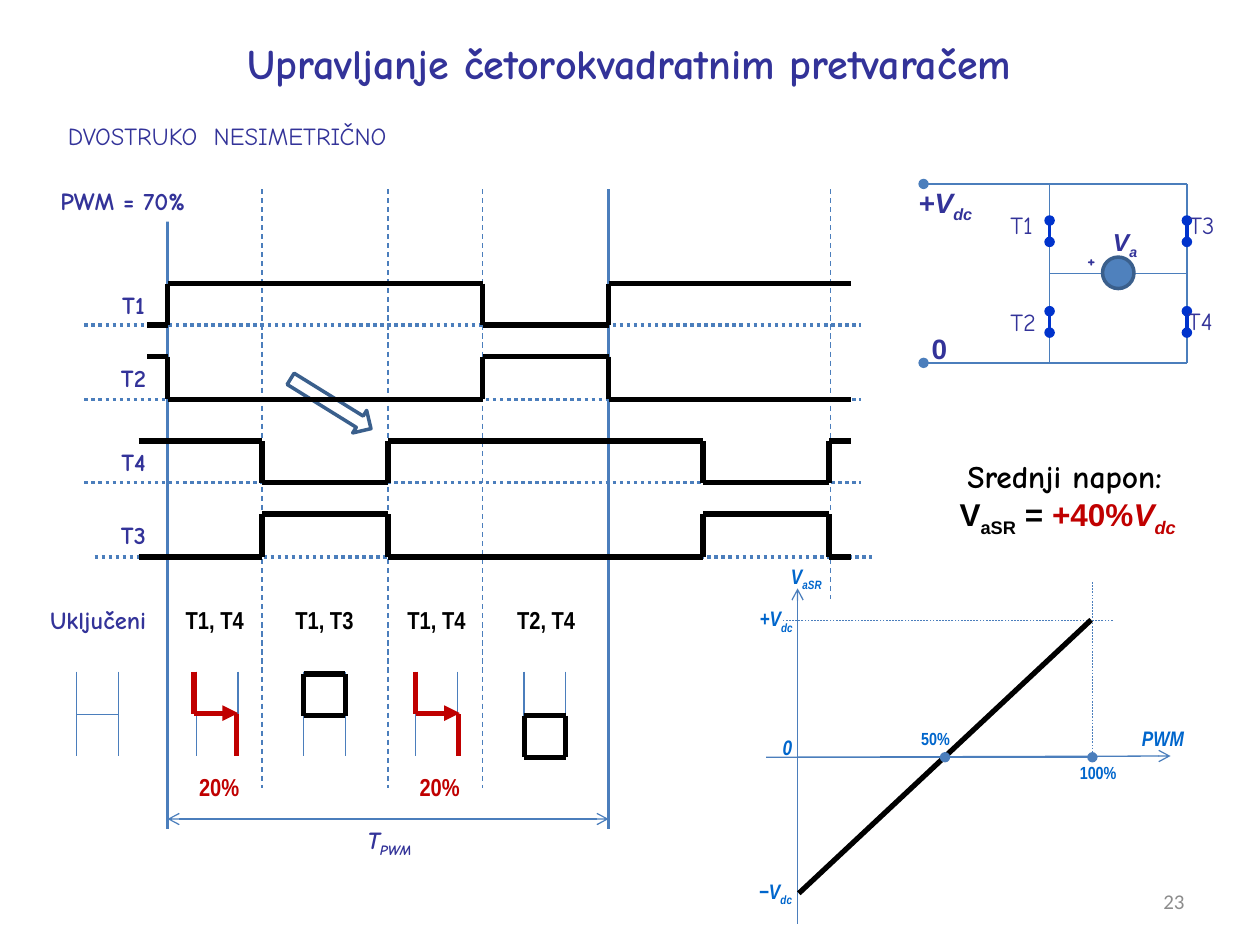
"""Build the slide on PWM control of a four-quadrant converter."""
import itertools

import lxml.etree
import pptx
import pptx.dml.color
import pptx.enum.dml
import pptx.enum.shapes
import pptx.enum.text
import pptx.oxml.ns
import pptx.util

Inches = pptx.util.Inches
Pt = pptx.util.Pt
RGB = pptx.dml.color.RGBColor
DASH = pptx.enum.dml.MSO_LINE.DASH
DOT = pptx.enum.dml.MSO_LINE.ROUND_DOT
PRESET = pptx.enum.shapes.MSO_SHAPE
ALIGN = pptx.enum.text.PP_ALIGN

BLUE = RGB(0x4B, 0x7E, 0xBC)
OUTLINE = RGB(0x3A, 0x5F, 0x8C)
MOTOR = RGB(0x4F, 0x81, 0xBD)
SWITCH = RGB(0x00, 0x33, 0xCC)
INDIGO = RGB(0x33, 0x33, 0x99)
AXIS = RGB(0x00, 0x66, 0xCC)
RED = RGB(0xC0, 0x00, 0x00)
BLACK = RGB(0, 0, 0)
WHITE = RGB(255, 255, 255)
GRAY = RGB(0x8C, 0x8C, 0x8C)

COMIC = {"name": "Comic Neue", "size": Pt(14), "color": INDIGO}
COMIC_BOLD = COMIC | {"bold": True}
NARROW = {"name": "Arial Narrow", "size": Pt(14), "bold": True, "color": BLACK}
CHART = NARROW | {"size": Pt(12), "italic": True, "color": AXIS}
PERCENT = CHART | {"size": Pt(10), "italic": False}
CIRCUIT = {"name": "Arial", "size": Pt(16), "bold": True, "color": INDIGO}
SUB = {"baseline": "-25000"}

deck = pptx.Presentation()
deck.slide_width, deck.slide_height = Inches(10), Inches(7.5)
slide = deck.slides.add_slide(deck.slide_layouts[5])


def draw_line(start, end, color=BLUE, width=0.75, dash=None, head=None, tail=None):
    line = slide.shapes.add_connector(
        pptx.enum.shapes.MSO_CONNECTOR.STRAIGHT, *map(Inches, start + end))
    line.line.color.rgb = color
    for name, value in {"width": Pt(width), "dash_style": dash}.items():
        setattr(line.line, name, value)
    for tag, kind in (("a:headEnd", head), ("a:tailEnd", tail)):
        if kind:
            lxml.etree.SubElement(line.line._ln, pptx.oxml.ns.qn(tag), type=kind)
    lxml.etree.SubElement(line._element.spPr, pptx.oxml.ns.qn("a:effectLst"))


def write(place, paragraphs, style, align=ALIGN.CENTER, wrap=False, holder=None):
    holder = holder or slide.shapes.add_textbox(*map(Inches, place))
    frame = holder.text_frame
    frame.word_wrap = wrap
    for index, pieces in enumerate(paragraphs):
        paragraph = frame.add_paragraph() if index else frame.paragraphs[0]
        paragraph.alignment = align
        for text, changes in pieces:
            run = paragraph.add_run()
            run.text = text
            for name, value in (style | changes).items():
                if name == "color":
                    run.font.color.rgb = value
                elif name == "baseline":
                    run._r.get_or_add_rPr().set(name, value)
                else:
                    setattr(run.font, name, value)
    return frame


title = slide.shapes.title
for name, value in zip(("left", "top", "width", "height"), (1.37, 0.25, 7.25, 0.5)):
    setattr(title, name, Inches(value))
write(None, [[("Upravljanje četorokvadratnim pretvaračem", {})]],
      COMIC_BOLD | {"size": Pt(24)}, holder=title)

for x, bottom in ((2.08, 6.25), (3.08, 6.25), (3.83, 6.25), (6.59, 4.75)):
    draw_line((x, 1.5), (x, bottom), dash=DASH)
for x in (1.33, 4.83):
    draw_line((x, 1.5), (x, 6.58), width=1.25)
for left, right, y in ((0.67, 6.83, 2.58), (0.67, 6.83, 3.17),
                       (0.67, 6.83, 3.83), (0.75, 6.92, 4.42)):
    draw_line((left, y), (right, y), width=0, dash=DOT)
draw_line((1.33, 6.5), (4.83, 6.5), head="arrow", tail="arrow")

pwm_plate = slide.shapes.add_shape(
    PRESET.RECTANGLE, *map(Inches, (0.29, 1.42, 1.37, 0.34)))
pulse_arrow = slide.shapes.add_shape(
    PRESET.RIGHT_ARROW, *map(Inches, (2.25, 3.1, 0.75, 0.21)))
pulse_arrow.rotation = 31.8
write(None, [[("PWM = 70%", {})]], COMIC_BOLD, holder=pwm_plate)

leg_a, leg_b = (1.17, 1.33, 3.83, 4.83, 6.75), (1.1, 2.08, 3.08, 5.58, 6.58, 6.75)
for name, label_top, high, low, edges, starts_high in (
        ("T1", 2.25, 2.25, 2.58, leg_a, False),
        ("T2", 2.83, 2.83, 3.17, leg_a, True),
        ("T4", 3.5, 3.5, 3.83, leg_b, True),
        ("T3", 4.08, 4.08, 4.42, leg_b, False)):
    levels = itertools.cycle((high, low) if starts_high else (low, high))
    corners = [(x, y) for pair, y in zip(itertools.pairwise(edges), levels) for x in pair]
    for start, end in itertools.pairwise(corners):
        draw_line(start, end, BLACK, 3)
    write((0.83, label_top, 0.46, 0.34), [[(name, {})]], COMIC_BOLD)

for x in (0.61, 1.56, 2.41, 3.3, 4.16):
    for start, end in (((x, 5.33), (x, 6)), ((x + 0.33, 5.33), (x + 0.33, 6)),
                       ((x, 5.67), (x + 0.33, 5.67))):
        draw_line(start, end)
for x, top in ((2.41, 5.35), (4.16, 5.68)):
    loop = [(x, top), (x + 0.33, top), (x + 0.33, top + 0.33), (x, top + 0.33), (x, top)]
    for start, end in itertools.pairwise(loop):
        draw_line(start, end, BLACK, 3)
for x in (1.54, 3.3):
    draw_line((x, 5.33), (x, 5.67), RED, 3)
    draw_line((x + 0.34, 5.67), (x + 0.34, 6), RED, 3)
    draw_line((x, 5.66), (x + 0.35, 5.66), RED, 3, tail="triangle")

draw_line((6.08, 6.01), (9.29, 6), tail="arrow")
draw_line((6.33, 7.33), (6.33, 4.67), tail="arrow")
draw_line((8.67, 4.62), (8.67, 6.01), width=0.25, dash=DASH)
draw_line((8.83, 4.92), (6.21, 4.92), width=0.25, dash=DASH)
draw_line((6.34, 7.09), (8.66, 4.92), BLACK, 3)
for left, right in ((6.33, 7.5), (7.5, 8.67)):
    draw_line((left, 6.01), (right, 6.01), tail="oval")

for y in (1.46, 2.88):
    draw_line((7.33, y), (9.42, y), head="oval")
draw_line((8.33, 2.17), (9.42, 2.17))
for x in (8.33, 9.42):
    draw_line((x, 1.46), (x, 2.88))
    for top in (1.75, 2.47):
        draw_line((x, top), (x, top + 0.17), SWITCH, 2, head="oval", tail="oval")
motor = slide.shapes.add_shape(PRESET.OVAL, *map(Inches, (8.75, 2.04, 0.25, 0.25)))

for shape, fill, outline in ((pwm_plate, WHITE, None), (pulse_arrow, WHITE, OUTLINE),
                             (motor, MOTOR, OUTLINE)):
    shape.shadow.inherit = False
    shape.fill.solid()
    shape.fill.fore_color.rgb = fill
    if outline:
        shape.line.color.rgb = outline
        shape.line.width = Pt(2)
    else:
        shape.line.fill.background()

for place, pieces, style in (
        ((0.22, 0.91, 3.17, 0.34), [("DVOSTRUKO  NESIMETRIČNO", {})], COMIC),
        ((2.75, 6.5, 0.72, 0.34), [("T", {}), ("PWM ", SUB)], COMIC_BOLD | {"italic": True}),
        ((0.25, 4.75, 1.06, 0.34), [("Uključeni", {})], COMIC_BOLD),
        ((1.37, 4.75, 0.67, 0.34), [("T1, T4", {})], NARROW),
        ((2.24, 4.75, 0.67, 0.34), [("T1, T3", {})], NARROW),
        ((3.13, 4.75, 0.67, 0.34), [("T1, T4", {})], NARROW),
        ((4, 4.75, 0.67, 0.34), [("T2, T4", {})], NARROW),
        ((1.48, 6.08, 0.52, 0.34), [("20%", {})], NARROW | {"color": RED}),
        ((3.23, 6.08, 0.52, 0.34), [("20%", {})], NARROW | {"color": RED}),
        ((8.96, 5.71, 0.54, 0.3), [("PWM", {})], CHART),
        ((7.21, 5.73, 0.43, 0.27), [("50%", {})], PERCENT),
        ((8.47, 6, 0.49, 0.27), [("100%", {})], PERCENT),
        ((6.17, 4.42, 0.46, 0.3), [("V", {}), ("aSR", SUB)], CHART),
        ((5.92, 4.76, 0.48, 0.3), [("+V", {}), ("dc", SUB)], CHART),
        ((5.91, 6.92, 0.49, 0.3), [("−V", {}), ("dc", SUB)], CHART),
        ((6.11, 5.78, 0.28, 0.3), [("0", {})], CHART),
        ((7.17, 1.42, 0.7, 0.37), [("+V", {}), ("dc ", SUB)], CIRCUIT | {"italic": True}),
        ((7.29, 2.58, 0.33, 0.37), [("0", {})], CIRCUIT),
        ((8.72, 1.75, 0.45, 0.34), [("V", {}), ("a ", SUB)],
         CIRCUIT | {"size": Pt(14), "italic": True})):
    write(place, [pieces], style)

for left, top, text, style in (
        (7.92, 1.62, "T1", COMIC), (7.92, 2.39, "T2", COMIC),
        (9.34, 1.62, "T3", COMIC), (9.33, 2.38, "T4", COMIC),
        (8.53, 1.92, "+", COMIC_BOLD | {"size": Pt(11)})):
    write((left, top, 0.58, 0.41), [[(text, {})]], style, ALIGN.LEFT, True)

red_italic = {"color": RED, "italic": True}
write((7.38, 3.58, 2.14, 0.71),
      [[("Srednji napon:", {"name": "Comic Neue"})],
       [(" ", {"name": "Comic Neue"}), ("V", {}), ("aSR", SUB), (" = ", {}),
        ("+40%", {"color": RED}), ("V", red_italic), ("dc ", red_italic | SUB)]],
      CIRCUIT | {"size": Pt(18), "color": BLACK})

page_number = write((7.17, 6.95, 2.33, 0.4), [[("23", {})]],
                    {"name": "Calibri", "size": Pt(12), "color": GRAY}, ALIGN.RIGHT, True)
page_number.vertical_anchor = pptx.enum.text.MSO_ANCHOR.MIDDLE

deck.save("out.pptx")
